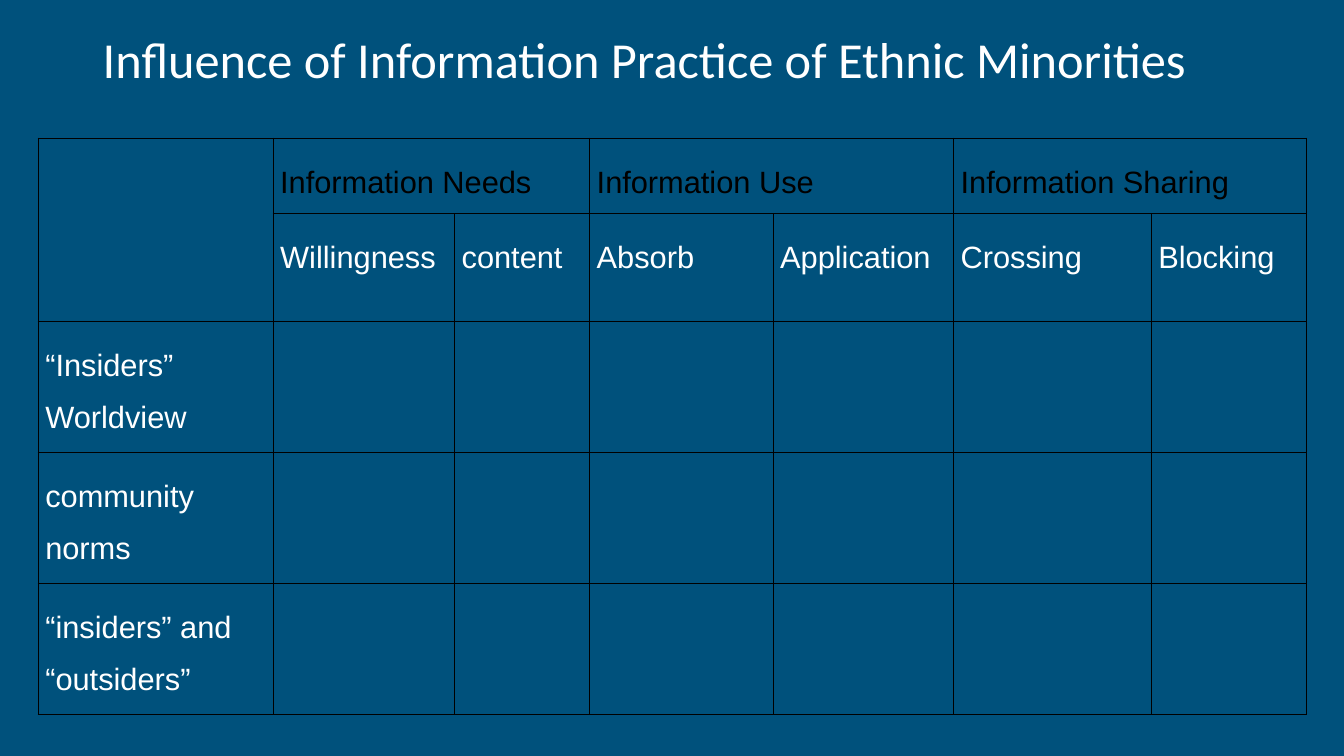
from dataclasses import dataclass

from lxml import etree
from pptx import Presentation
from pptx import util as u
from pptx.dml.color import RGBColor
from pptx.enum import text
from pptx.oxml import ns


@dataclass(frozen=True)
class Theme:
    background: str = "00517C"
    light: str = "FFFFFF"
    dark: str = "000000"
    title_font: str = "Calibri"
    body_font: str = "Arial"
    title_size: int = 36
    body_size: int = 22
    border: int = 1


def write(tf, content, *, font, size, color, spacing):
    p = tf.paragraphs[0]
    p.line_spacing = spacing
    r = p.add_run()
    r.text = content
    r.font.name = font
    r.font.size = u.Pt(size)
    r.font.color.rgb = RGBColor.from_string(color)


class Deck:
    def __init__(self, theme, width, height):
        self.theme = theme
        self.prs = Presentation()
        self.prs.slide_width = u.Inches(width)
        self.prs.slide_height = u.Inches(height)

    def add_slide(self):
        self.s = self.prs.slides.add_slide(self.prs.slide_layouts[6])
        fill = self.s.background.fill
        fill.solid()
        fill.fore_color.rgb = RGBColor.from_string(self.theme.background)

    def box(self, left, top, width, height):
        w, h = self.prs.slide_width, self.prs.slide_height
        shares = zip((left, top, width, height), (w, h, w, h))
        return [round(percent * full / 100) for percent, full in shares]

    def title(self, content, *area):
        sp = self.s.shapes.add_textbox(*self.box(*area))
        tf = sp.text_frame
        tf.word_wrap = True
        tf.vertical_anchor = text.MSO_ANCHOR.MIDDLE
        write(tf, content, font=self.theme.title_font,
              size=self.theme.title_size, color=self.theme.light, spacing=0.9)

    def table(self, rows, columns, *area):
        box = self.box(*area)
        table = self.s.shapes.add_table(len(rows), len(columns), *box).table
        table.first_row = table.horz_banding = False
        for column, weight in zip(table.columns, columns):
            column.width = round(box[2] * weight / sum(columns))
        for row, weight in zip(table.rows, rows):
            row.height = round(box[3] * weight / sum(rows))
        for cell in table.iter_cells():
            self.outline(cell)
            cell.fill.background()
        return table

    def outline(self, cell):
        tc_pr = cell._tc.get_or_add_tcPr()
        for side in "LRTB":
            ln = etree.SubElement(tc_pr, ns.qn(f"a:ln{side}"),
                                  w=str(u.Pt(self.theme.border)))
            fill = etree.SubElement(ln, ns.qn("a:solidFill"))
            etree.SubElement(fill, ns.qn("a:srgbClr"), val=self.theme.dark)

    def label(self, cell, content, color):
        cell.margin_left = cell.margin_right = u.Inches(0.07)
        cell.margin_top = cell.margin_bottom = u.Inches(0.1)
        write(cell.text_frame, content, font=self.theme.body_font,
              size=self.theme.body_size, color=color, spacing=1.5)


def main():
    groups = {
        "Information Needs": ("Willingness", "content"),
        "Information Use": ("Absorb", "Application"),
        "Information Sharing": ("Crossing", "Blocking"),
    }
    influences = ("“Insiders” Worldview", "community norms",
                  "“insiders” and “outsiders”")
    theme = Theme()
    deck = Deck(theme, 13.33, 7.5)
    deck.add_slide()
    deck.title("Influence of Information Practice of Ethnic Minorities",
               6.9, 1.6, 86.25, 13.33)
    table = deck.table((0.69, 1.07, 1.19, 1.19, 1.19),
                       (2.33, 1.8, 1.34, 1.82, 1.79, 1.96, 1.54),
                       2.85, 18.27, 94.37, 71.07)
    table.cell(0, 0).merge(table.cell(1, 0))
    for i, (group, aspects) in enumerate(groups.items()):
        first = 1 + 2 * i
        table.cell(0, first).merge(table.cell(0, first + 1))
        deck.label(table.cell(0, first), group, theme.dark)
        for column, aspect in enumerate(aspects, first):
            deck.label(table.cell(1, column), aspect, theme.light)
    for row, influence in enumerate(influences, 2):
        deck.label(table.cell(row, 0), influence, theme.light)
    deck.prs.save("out.pptx")


if __name__ == "__main__":
    main()
